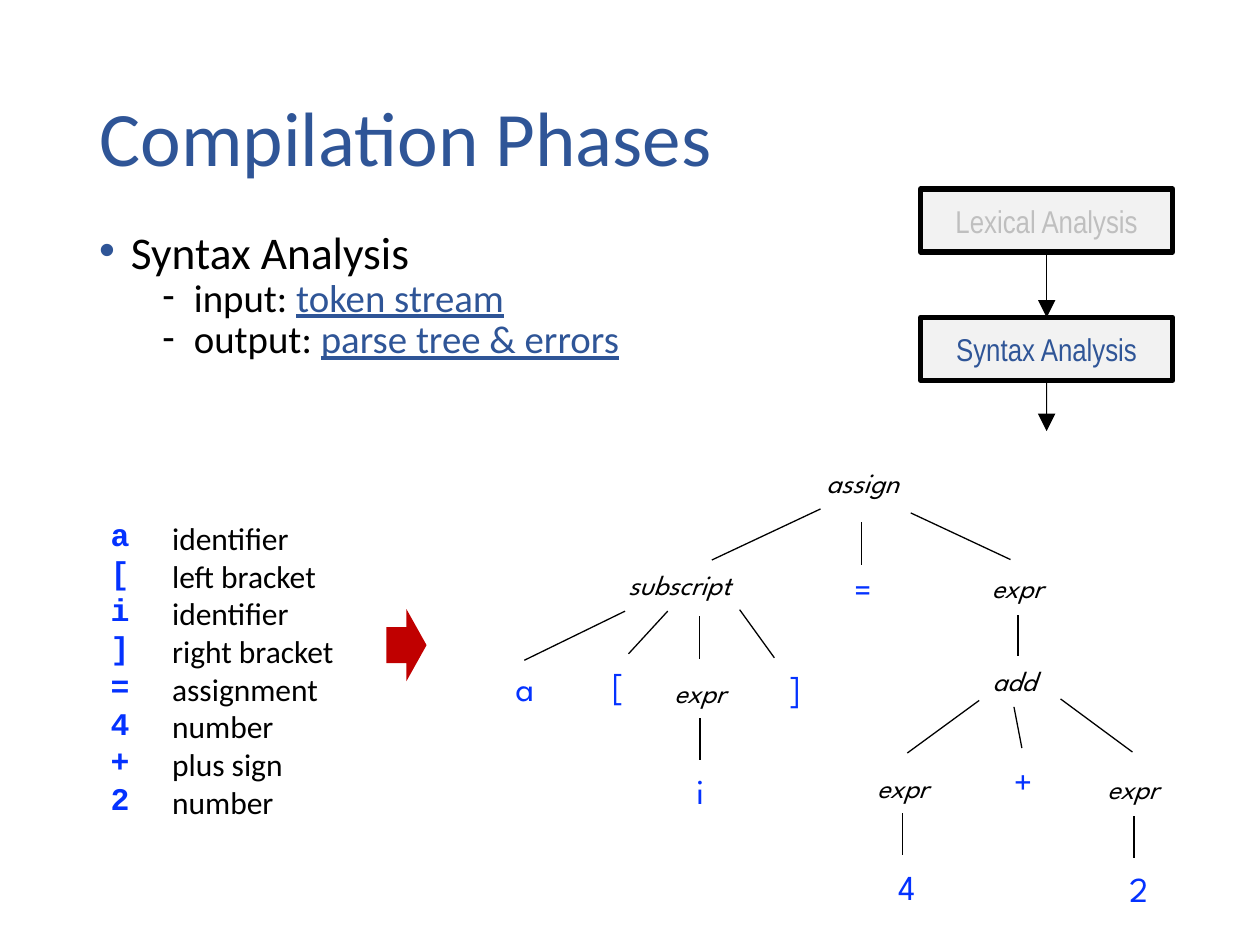
from pptx import Presentation
from pptx import util as u
from pptx.dml.color import RGBColor
from pptx.enum import shapes, text
from pptx.oxml.ns import qn
from lxml import etree

BLACK = RGBColor(0x00, 0x00, 0x00)
BLUE = RGBColor(0x2F, 0x55, 0x97)
TOKEN_BLUE = RGBColor(0x04, 0x32, 0xFF)
RED = RGBColor(0xC0, 0x00, 0x00)
LIGHT = RGBColor(0xF2, 0xF2, 0xF2)
FADED = RGBColor(0xBF, 0xBF, 0xBF)

# Content; all lengths are centimetres
TITLE = "Compilation Phases"
TOPIC = "Syntax Analysis"
DETAILS = [("input: ", "token stream"), ("output: ", "parse tree & errors")]
PHASES = [("Lexical Analysis", FADED), ("Syntax Analysis", BLUE)]
TOKENS = [
    ("a", "identifier"), ("[", "left bracket"), ("i", "identifier"),
    ("]", "right bracket"), ("=", "assignment"), ("4", "number"),
    ("+", "plus sign"), ("2", "number"),
]
# Inner tree nodes and leaves: label, centre x, centre y
RULES = [
    ("assign", 17.39, 9.74), ("subscript", 13.7, 11.79),
    ("expr", 20.51, 11.85), ("expr", 14.11, 13.96), ("add", 20.45, 13.73),
    ("expr", 18.2, 15.87), ("expr", 22.84, 15.89),
]
LEAVES = [
    ("=", 17.4, 11.87), ("a", 10.58, 13.87), ("[", 12.46, 13.82),
    ("]", 16.03, 13.87), ("i", 14.12, 15.95), ("+", 20.63, 15.75),
    ("4", 18.28, 17.88), ("2", 22.96, 17.93),
]
# Tree branches: start x, start y, end x, end y
BRANCHES = [
    (16.54, 10.26, 14.35, 11.29), (17.36, 10.53, 17.36, 11.38),
    (18.36, 10.34, 20.37, 11.28),
    (12.6, 12.32, 10.57, 13.31), (13.46, 12.32, 12.67, 13.18),
    (14.1, 12.42, 14.1, 13.28), (14.91, 12.29, 15.61, 13.26),
    (14.11, 14.48, 14.11, 15.32), (20.52, 12.4, 20.52, 13.23),
    (19.74, 14.12, 18.29, 15.18), (20.44, 14.25, 20.6, 15.08),
    (21.38, 14.09, 22.83, 15.16),
    (18.2, 16.4, 18.2, 17.24), (22.86, 16.45, 22.86, 17.29),
]

deck = Presentation()
deck.slide_width, deck.slide_height = u.Cm(25.4), u.Cm(19.05)
page = deck.slides.add_slide(deck.slide_layouts[6])


def add_text_box(left, top, width, height, wrap=True):
    box = page.shapes.add_textbox(u.Cm(left), u.Cm(top), u.Cm(width), u.Cm(height))
    box.text_frame.word_wrap = wrap
    return box.text_frame


def add_span(para, words, font, size, color, bold=False, italic=False, underline=False):
    span = para.add_run()
    span.text = words
    span.font.name, span.font.size = font, u.Pt(size)
    span.font.bold, span.font.italic, span.font.underline = bold, italic, underline
    span.font.color.rgb = color


def add_line(x1, y1, x2, y2, width=0.75, arrow=False):
    line = page.shapes.add_connector(
        shapes.MSO_CONNECTOR.STRAIGHT, u.Cm(x1), u.Cm(y1), u.Cm(x2), u.Cm(y2))
    line.line.color.rgb, line.line.width = BLACK, u.Pt(width)
    if arrow:
        etree.SubElement(line.line._get_or_add_ln(), qn("a:tailEnd"),
                         type="triangle", w="lg", len="lg")
    etree.SubElement(line._element.spPr, qn("a:effectLst"))
    return line


def add_bullet(para, sign, left, color):
    props = para._p.get_or_add_pPr()
    props.set("marL", str(u.Cm(left)))
    props.set("indent", str(-u.Cm(0.64)))
    paint = etree.SubElement(props, qn("a:buClr"))
    etree.SubElement(paint, qn("a:srgbClr"), val=str(color))
    etree.SubElement(props, qn("a:buFont"), typeface="Arial")
    etree.SubElement(props, qn("a:buChar"), char=sign)


# Title
frame = add_text_box(1.76, 1.02, 21.9, 3.68)
frame.vertical_anchor = text.MSO_ANCHOR.MIDDLE
frame.paragraphs[0].line_spacing = 0.9
add_span(frame.paragraphs[0], TITLE, "Calibri", 44, BLUE)

# Topic and its details
frame = add_text_box(1.75, 4.7, 13.92, 2.97)
para = frame.paragraphs[0]
para.line_spacing, para.space_before = 0.7, u.Pt(10)
add_bullet(para, "•", 0.64, BLUE)
add_span(para, TOPIC, "Calibri", 25.9, BLACK)
for label, value in DETAILS:
    para = frame.add_paragraph()
    para.level = 1
    para.line_spacing, para.space_before = 0.7, u.Pt(5)
    add_bullet(para, "-", 1.91, BLACK)
    add_span(para, label, "Calibri", 22.2, BLACK)
    add_span(para, value, "Calibri", 22.2, BLUE, underline=True)

# Phase boxes and arrows
PHASE_LEFT, PHASE_TOP, PHASE_WIDTH, PHASE_HEIGHT, PHASE_STEP = 18.56, 3.81, 5.08, 1.27, 2.59
phase_boxes = []
for row, (phase, color) in enumerate(PHASES):
    box = page.shapes.add_shape(
        shapes.MSO_SHAPE.RECTANGLE, u.Cm(PHASE_LEFT), u.Cm(PHASE_TOP + row * PHASE_STEP),
        u.Cm(PHASE_WIDTH), u.Cm(PHASE_HEIGHT))
    box.shadow.inherit = False
    box.fill.solid()
    box.fill.fore_color.rgb = LIGHT
    box.line.color.rgb, box.line.width = BLACK, u.Pt(3)
    box.text_frame.vertical_anchor = text.MSO_ANCHOR.MIDDLE
    para = box.text_frame.paragraphs[0]
    para.alignment = text.PP_ALIGN.CENTER
    add_span(para, phase, "Arial Narrow", 18, color)
    phase_boxes.append(box)

middle = PHASE_LEFT + PHASE_WIDTH / 2
first_bottom = PHASE_TOP + PHASE_HEIGHT
second_top = PHASE_TOP + PHASE_STEP
link = add_line(middle, first_bottom, middle, second_top, 0.5, arrow=True)
link.begin_connect(phase_boxes[0], 2)
link.end_connect(phase_boxes[1], 0)
link = add_line(middle, second_top + PHASE_HEIGHT, middle, 8.69, 0.5, arrow=True)
link.begin_connect(phase_boxes[1], 2)

# Token list: symbols and their meanings
symbols, meanings = zip(*TOKENS)
for words, left, top, width, font, color, bold in [
    (symbols, 1.98, 10.26, 1.27, "Courier New", TOKEN_BLUE, True),
    (meanings, 3.22, 10.34, 3.81, "Calibri", BLACK, False),
]:
    frame = add_text_box(left, top, width, 6.4, wrap=False)
    for row, word in enumerate(words):
        para = frame.add_paragraph() if row else frame.paragraphs[0]
        para.line_spacing = u.Pt(21.55)
        add_span(para, word, font, 18, color, bold=bold)

# Red arrow from tokens to tree
arrow = page.shapes.add_shape(
    shapes.MSO_SHAPE.DOWN_ARROW, u.Cm(7.47), u.Cm(12.6), u.Cm(1.45), u.Cm(0.81))
arrow.rotation = 270
arrow.shadow.inherit = False
arrow.fill.solid()
arrow.fill.fore_color.rgb = RED
arrow.line.fill.background()

# Parse tree
for branch in BRANCHES:
    add_line(*branch)
for nodes, width, height, size, color, italic in [
    (RULES, 3.12, 0.94, 16, BLACK, True),
    (LEAVES, 2.34, 1.12, 20, TOKEN_BLUE, False),
]:
    for label, x, y in nodes:
        frame = add_text_box(x - width / 2, y - height / 2, width, height)
        frame.paragraphs[0].alignment = text.PP_ALIGN.CENTER
        add_span(frame.paragraphs[0], label, "League Spartan", size, color, italic=italic)

deck.save("out.pptx")
